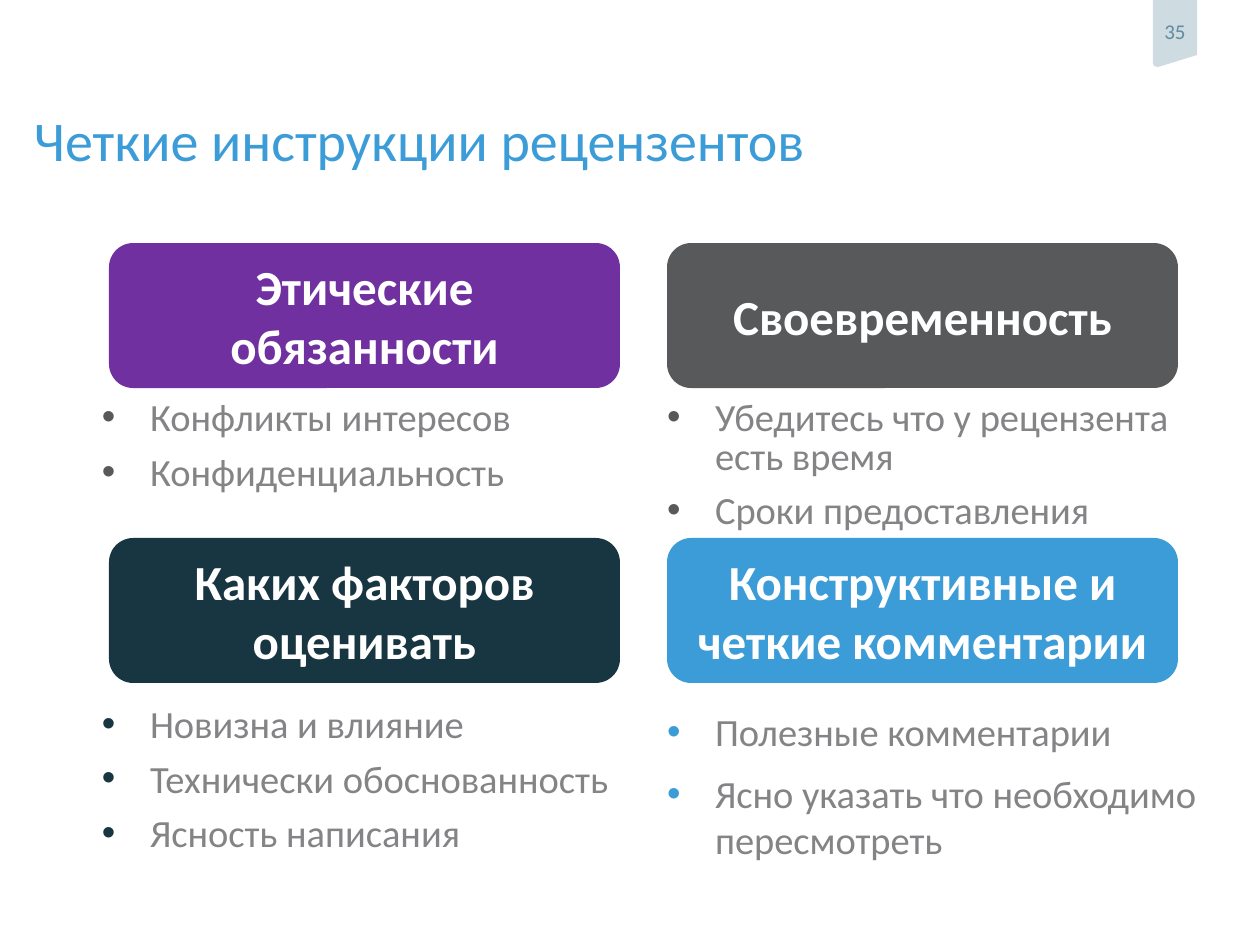
from lxml import etree
from pptx import Presentation
from pptx.dml.color import RGBColor
from pptx.enum.shapes import MSO_SHAPE
from pptx.enum.text import MSO_ANCHOR, MSO_AUTO_SIZE, PP_ALIGN
from pptx.oxml.ns import qn
from pptx.util import Pt

ROUNDED = MSO_SHAPE.ROUNDED_RECTANGLE
TOP, MIDDLE = MSO_ANCHOR.TOP, MSO_ANCHOR.MIDDLE
LEFT, CENTER = PP_ALIGN.LEFT, PP_ALIGN.CENTER
NO_FIT = MSO_AUTO_SIZE.NONE
PX = 914400 / 126
COLORS = {
    "blue": "3C9CD7", "purple": "7030A0", "gray": "58595B", "navy": "183642",
    "text": "848487", "white": "FFFFFF", "flag": "CEDBE0", "number": "608BA3",
}


def px(*values):
    return [round(v * PX) for v in values]


def add_text(p, text, size, color, align=LEFT, bold=False):
    p.alignment = align
    r = p.add_run()
    r.text = text
    for name, value in {"name": "Calibri", "size": Pt(size), "bold": bold}.items():
        setattr(r.font, name, value)
    r.font.color.rgb = RGBColor.from_string(COLORS[color])


prs = Presentation()
prs.slide_width, prs.slide_height = px(1260, 945)
s = prs.slides.add_slide(prs.slide_layouts[4])
title, *bodies = s.placeholders

title.left, title.top, title.width, title.height = px(34, 105, 1101, 60)
add_text(title.text_frame.paragraphs[0], "Четкие инструкции рецензентов", 32, "blue")

builder = s.shapes.build_freeform(1153, 0, scale=PX)
builder.add_line_segments([(1197, 0), (1197, 55), (1158, 67), (1154, 66), (1153, 63)])
flag = builder.convert_to_shape()
tf = flag.text_frame
tf.margin_left = tf.margin_right = tf.margin_top = 0
tf.margin_bottom = px(5)[0]
tf.word_wrap = False
add_text(tf.paragraphs[0], "35", 12, "number", CENTER)

sections = [
    ("Этические обязанности", "purple", "gray", 22,
     ["Конфликты интересов", "Конфиденциальность"]),
    ("Своевременность", "gray", "gray", 22,
     ["Убедитесь что у рецензента есть время", "Сроки предоставления"]),
    ("Каких факторов оценивать", "navy", "navy", 22,
     ["Новизна и влияние", "Технически обоснованность", "Ясность написания"]),
    ("Конструктивные и четкие комментарии", "blue", "blue", None,
     ["Полезные комментарии", "Ясно указать что необходимо пересмотреть"]),
]
filled = [(flag, "flag")]
for i, (heading, fill, bullet, spacing, items) in enumerate(sections):
    row, col = divmod(i, 2)
    sp = s.shapes.add_shape(ROUNDED, *px((109, 667)[col], (243, 538)[row], 511, 145))
    sp.text_frame.word_wrap = True
    add_text(sp.text_frame.paragraphs[0], heading, 28, "white", CENTER, True)
    filled.append((sp, fill))

    body = bodies[i]
    body.left, body.top, body.width, body.height = px((102, 667)[col], (401, 708)[row], 533, 108)
    tf = body.text_frame
    for j, item in enumerate(items):
        p = tf.add_paragraph() if j else tf.paragraphs[0]
        p.space_before = Pt(9 if j else 0)
        p.line_spacing = Pt(spacing) if spacing else 1.0
        pPr = p._p.get_or_add_pPr()
        pPr.set("marL", str(px(48)[0]))
        pPr.set("indent", str(px(-48)[0]))
        clr = etree.SubElement(pPr, qn("a:buClr"))
        etree.SubElement(clr, qn("a:srgbClr"), val=COLORS[bullet])
        etree.SubElement(pPr, qn("a:buFont"), typeface="Arial")
        etree.SubElement(pPr, qn("a:buChar"), char="•")
        add_text(p, item, 22, "text")

for sp, fill in filled:
    sp.shadow.inherit = False
    sp.fill.solid()
    sp.fill.fore_color.rgb = RGBColor.from_string(COLORS[fill])
    sp.line.fill.background()
    sp.text_frame.vertical_anchor = MIDDLE

frame = {"margin_left": 0, "margin_right": 0, "margin_top": 0, "margin_bottom": 0,
         "word_wrap": True, "auto_size": NO_FIT, "vertical_anchor": TOP}
for sp in [title, *bodies]:
    for name, value in frame.items():
        setattr(sp.text_frame, name, value)

prs.save("out.pptx")
